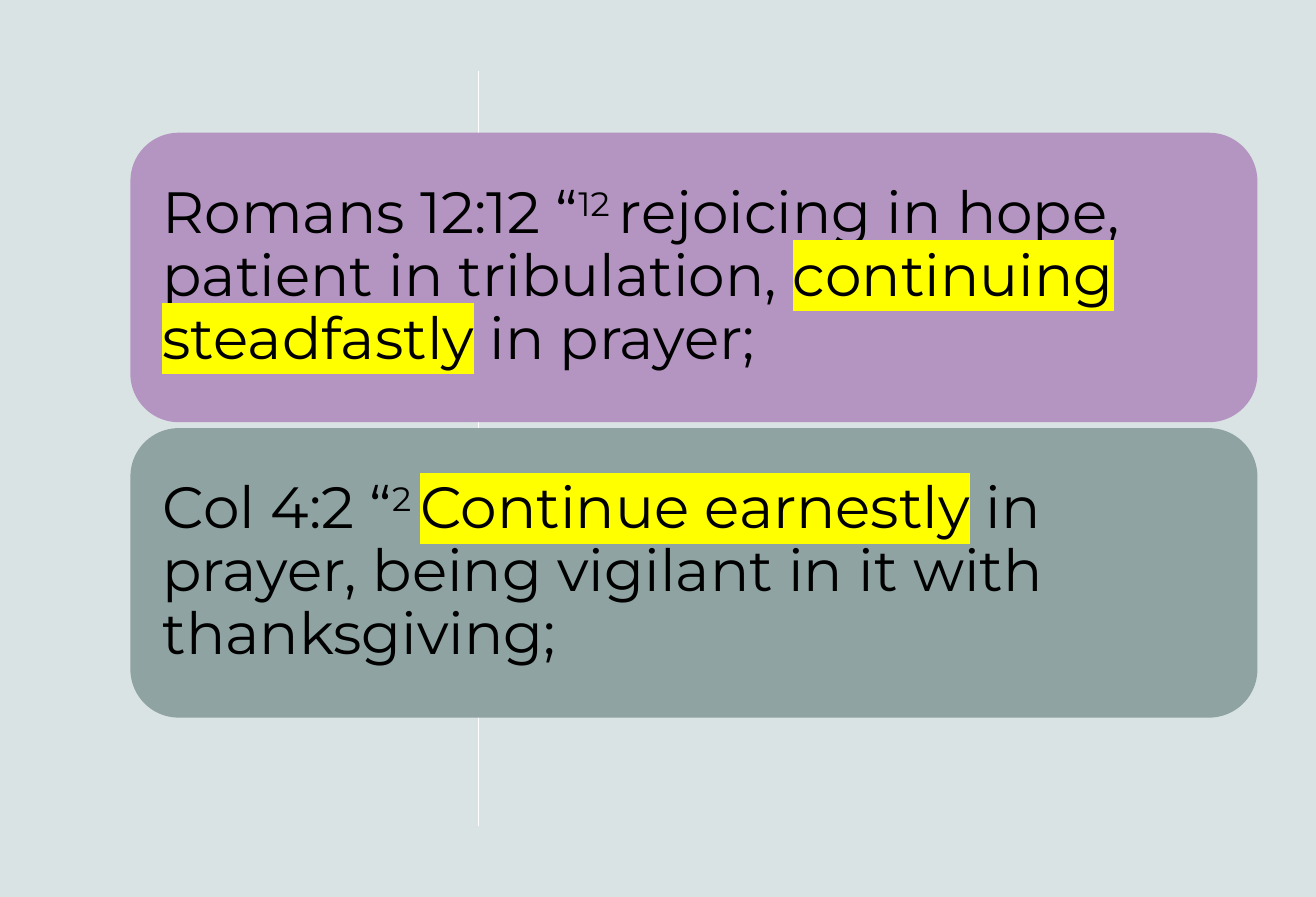
from lxml.etree import SubElement
from pptx import Presentation
from pptx.dml.color import RGBColor
from pptx.enum.shapes import MSO_CONNECTOR, MSO_SHAPE
from pptx.enum.text import MSO_ANCHOR, PP_ALIGN
from pptx.oxml.ns import qn
from pptx.util import Pt

PX = 9144  # 100 px to the inch


def paint(color, code):
    color.rgb = RGBColor.from_string(code)


def mark(run, code):
    """Highlight a run; call after its colour and before its font is set."""
    light = SubElement(run.font._element, qn("a:highlight"))
    SubElement(light, qn("a:srgbClr"), val=code)


deck = Presentation()
deck.slide_width, deck.slide_height = 1100 * PX, 750 * PX
slide = deck.slides.add_slide(deck.slide_layouts[6])
slide.background.fill.solid()
paint(slide.background.fill.fore_color, "DAE3E3")

rule = slide.shapes.add_connector(
    MSO_CONNECTOR.STRAIGHT, 400 * PX, 59 * PX, 400 * PX, 691 * PX)
paint(rule.line.color, "FFFFFF")
rule.line.width = Pt(1)
SubElement(rule._element.spPr, qn("a:effectLst"))

# Each verse: card colour, then runs of (text, style)
verses = [
    ("B495C2", [("Romans 12:12 “", ""), ("12 ", "super"),
                ("rejoicing in hope, patient in tribulation, ", ""),
                ("continuing steadfastly", "mark"), (" in prayer;", "")]),
    ("8FA3A3", [("Col 4:2 “", ""), ("2 ", "super"),
                ("Continue earnestly", "mark"),
                (" in prayer, being vigilant in it with thanksgiving;", "")]),
]
TOP, STEP = 111, 247

for row, (fill, parts) in enumerate(verses):
    card = slide.shapes.add_shape(
        MSO_SHAPE.ROUNDED_RECTANGLE,
        109 * PX, (TOP + row * STEP) * PX, 942 * PX, 242 * PX)
    card.shadow.inherit = False
    card.fill.solid()
    paint(card.fill.fore_color, fill)
    card.line.fill.background()

    frame = card.text_frame
    frame.word_wrap = True
    frame.vertical_anchor = MSO_ANCHOR.MIDDLE
    frame.margin_left = frame.margin_right = 15 * PX
    frame.margin_top = frame.margin_bottom = 15 * PX
    verse = frame.paragraphs[0]
    verse.alignment = PP_ALIGN.LEFT
    verse.line_spacing = 0.9
    for text, style in parts:
        run = verse.add_run()
        run.text = text
        run.font.size = Pt(35)
        paint(run.font.color, "000000")
        if style == "mark":
            mark(run, "FFFF00")
        elif style == "super":
            run.font._element.set("baseline", "30000")
        run.font.name = "Montserrat"

deck.save("out.pptx")
